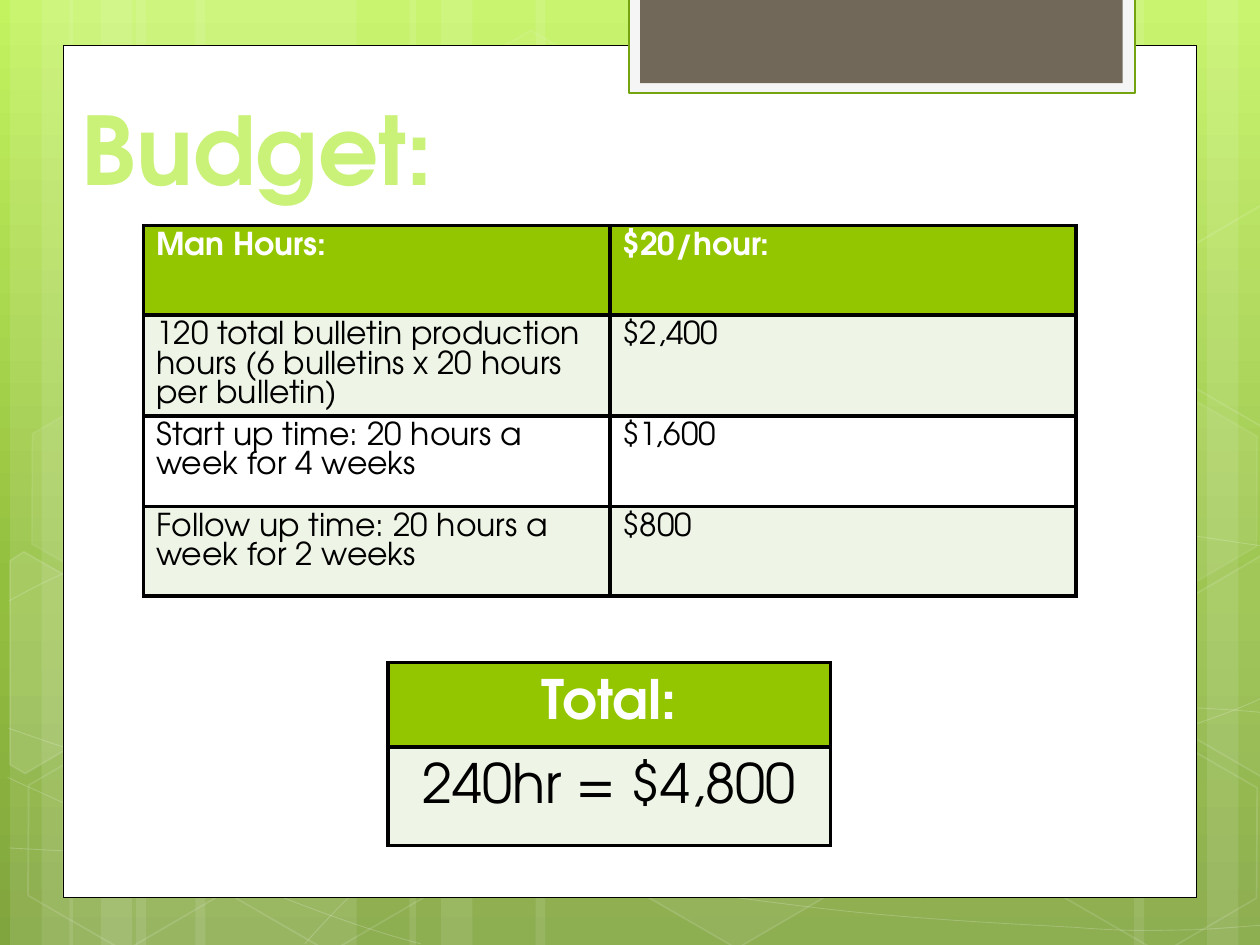
from copy import deepcopy
from lxml.etree import SubElement as Sub
from pptx import Presentation as Deck
from pptx.dml.color import RGBColor as RGB
from pptx.enum.shapes import MSO_SHAPE as Kind
from pptx.enum.text import MSO_ANCHOR as Anchor, MSO_AUTO_SIZE as Auto, PP_ALIGN as Align
from pptx.oxml.ns import qn
from pptx.util import Cm, Pt

WHITE = RGB(0xFF, 0xFF, 0xFF)
BLACK = RGB(0, 0, 0)
LIME = RGB(0xCA, 0xF2, 0x78)
GREEN = RGB(0x94, 0xC6, 0x00)
MINT = RGB(0xEE, 0xF5, 0xE7)
MOSS = RGB(0x74, 0xA5, 0x10)
PALE = RGB(0xF5, 0xF5, 0xF5)
BROWN = RGB(0x71, 0x68, 0x5A)
SKY = [(0, RGB(0xC3, 0xF3, 0x5F)), (0.62, RGB(0x93, 0xBF, 0x3F)), (1, RGB(0x81, 0xA5, 0x3E))]
FONT = "TeX Gyre Adventor"
INCH = 2.54

RAYS = [(1.08, 1.75), (0.08, 0.5), (0.33, 0.83), (1.55, 1.75), (0.55, 0.5), (0.8, 0.83),
        (7.33, 1.75), (9.58, 0.5), (9, 0.83), (4.25, 3.08), (3.25, 0.5), (3.5, 0.83)]
CURVES = [
    [(0.07, 6.73), (0.61, 6.76), (1.15, 6.79), (1.9, 6.78), (2.65, 6.77), (3.58, 6.75),
     (4.58, 6.65), (5.58, 6.55), (7, 6.36), (7.92, 6.17), (8.83, 5.98), (9.77, 5.68), (10.07, 5.51)],
    [(0.07, 4.77), (0.36, 4.61), (0.65, 4.46), (1.21, 4.31), (1.78, 4.16), (2.59, 3.94),
     (3.47, 3.87), (4.36, 3.8), (5.44, 3.79), (6.54, 3.87), (7.64, 3.95), (9.47, 4.26), (10.07, 4.34)],
    [(0.06, 6.17), (1.27, 6.72), (2.47, 7.27), (3.34, 7.49)],
    [(0.07, 5.78), (0.38, 5.89), (0.7, 6), (1.28, 6.16), (1.86, 6.31), (2.73, 6.56),
     (3.57, 6.73), (4.4, 6.9), (5.45, 7.08), (6.28, 7.18), (7.11, 7.29), (8, 7.33),
     (8.53, 7.36), (9.05, 7.4), (9.19, 7.38), (9.45, 7.38), (9.71, 7.37), (9.89, 7.35), (10.07, 7.34)],
    [(2.42, 7.49), (2.6, 7.29), (2.78, 7.09), (3.02, 6.91), (3.26, 6.73), (3.6, 6.53),
     (3.88, 6.39), (4.16, 6.25), (4.33, 6.19), (4.7, 6.09), (5.06, 5.99), (5.73, 5.85),
     (6.08, 5.78), (6.44, 5.71), (6.49, 5.71), (6.8, 5.69), (7.11, 5.66), (7.6, 5.63),
     (7.94, 5.62), (8.29, 5.61), (8.86, 5.62), (8.86, 5.62), (9.1, 5.62), (9.3, 5.62),
     (9.53, 5.62), (9.71, 5.63), (9.88, 5.64), (10.06, 5.66)],
]
CELLS = [(3.34, 0.36, 4, 8), (4.97, 5.89, 6, 12), (0.11, 5.91, 0, 12), (0.14, 3.12, 7, 8),
         (1.74, 5.92, 0, 12), (7.53, 4.53, 10, 12), (8.34, 5.93, 0, 12), (8.34, 3.14, 7, 8)]
SHARDS = [
    ([(0.08, 4.45), (0.19, 4.38), (0.96, 4.82), (0.95, 5.7), (0.2, 6.14), (0.08, 6.07)], 10),
    ([(9.26, 4.85), (10.01, 4.41), (10.09, 4.46), (10.09, 6.13), (10.02, 6.17), (9.26, 5.73)], 4),
    ([(9.26, 2.07), (10.01, 1.63), (10.1, 1.68), (10.09, 3.35), (10.02, 3.39), (9.26, 2.95)], 0),
]
HOURS = [
    ("Man Hours:", "$20/hour:"),
    ("120 total bulletin production hours (6 bulletins x 20 hours per bulletin)", "$2,400"),
    ("Start up time: 20 hours a week for 4 weeks", "$1,600"),
    ("Follow up time: 20 hours a week for 2 weeks", "$800"),
]
TOTAL = [("Total:",), ("240hr = $4,800",)]


def size(*nums):
    return [Cm(INCH * num) for num in nums]


def write(frame, text, pts=18, color=BLACK, bold=False, align=Align.LEFT):
    para = frame.paragraphs[0]
    para.alignment = align
    run = para.add_run()
    run.text = text
    font = run.font
    font.name, font.size, font.bold = FONT, Pt(pts), bold
    font.color.rgb = color


def paint(fill, color, alpha):
    if not alpha:
        fill.background()
        return
    fill.solid()
    fill.fore_color.rgb = color
    if alpha < 100:
        node = fill._xPr.find(qn("a:solidFill"))[0]
        Sub(node, qn("a:alpha"), val=str(alpha * 1000))


def bend(shape):
    route = next(shape._element.iter(qn("a:path")))
    steps = route.findall(qn("a:lnTo"))
    for i in range(0, len(steps), 3):
        curve = Sub(route, qn("a:cubicBezTo"))
        for step in steps[i:i + 3]:
            curve.append(step[0])
            route.remove(step)


class Page:
    def __init__(self):
        self.deck = Deck()
        self.deck.slide_width, self.deck.slide_height = size(10, 7.5)
        self.slide = self.deck.slides.add_slide(self.deck.slide_layouts[5])
        self.shapes = self.slide.shapes

    def sky(self, stops):
        fill = self.slide.background.fill
        fill.gradient()
        fill.gradient_angle = 270
        group = next(self.slide._element.iter(qn("a:gsLst")))
        group.append(deepcopy(group[-1]))
        for stop, (spot, color) in zip(fill.gradient_stops, stops):
            stop.position = spot
            stop.color.rgb = color

    def style(self, shape, fill=WHITE, alpha=100, line=WHITE, width=1, sheer=0):
        shape.shadow.inherit = False
        paint(shape.fill, fill, alpha)
        paint(shape.line.fill, line, sheer)
        if sheer:
            shape.line.width = Pt(width)

    def box(self, *spot, kind=Kind.RECTANGLE, **look):
        shape = self.shapes.add_shape(kind, *size(*spot))
        self.style(shape, **look)
        return shape

    def hexa(self, x, y, alpha, sheer):
        shape = self.box(x, y, 1.75, 1.52, kind=Kind.HEXAGON, alpha=alpha, sheer=sheer)
        shape.adjustments[0] = 0.285
        shape.rotation = 30

    def free(self, pts, close=False, **look):
        first, *rest = [size(*pt) for pt in pts]
        form = self.shapes.build_freeform(*first)
        form.add_line_segments(rest, close=close)
        shape = form.convert_to_shape()
        self.style(shape, **look)
        return shape

    def title(self, text, *spot):
        shape = self.shapes.title
        shape.left, shape.top, shape.width, shape.height = size(*spot)
        self.shapes._spTree.append(shape._element)
        frame = shape.text_frame
        frame.auto_size = Auto.NONE
        frame.vertical_anchor = Anchor.BOTTOM
        write(frame, text, pts=54, color=LIME, bold=True)

    def edge(self, cell):
        props = cell._tc.get_or_add_tcPr()
        for i, side in enumerate(("lnL", "lnR", "lnT", "lnB")):
            line = Sub(props, qn("a:" + side), w=str(Pt(2.25)))
            Sub(Sub(line, qn("a:solidFill")), qn("a:srgbClr"), val=str(BLACK))
            props.insert(i, line)

    def table(self, rows, x, y, wide, highs, inset=(0.1, 0.05), **look):
        cols = len(rows[0])
        grid = self.shapes.add_table(len(rows), cols, *size(x, y, wide * cols, sum(highs))).table
        grid.first_row = grid.horz_banding = False
        for col in grid.columns:
            col.width = Cm(INCH * wide)
        for r, (row, high) in enumerate(zip(rows, highs)):
            grid.rows[r].height = Cm(INCH * high)
            for c, text in enumerate(row):
                cell = grid.cell(r, c)
                cell.margin_left = cell.margin_right = Cm(INCH * inset[0])
                cell.margin_top = cell.margin_bottom = Cm(INCH * inset[1])
                paint(cell.fill, GREEN if r == 0 else MINT if r % 2 else WHITE, 100)
                self.edge(cell)
                write(cell.text_frame, text, color=BLACK if r else WHITE, bold=r == 0, **look)


def main():
    page = Page()
    page.sky(SKY)
    for x, wide in RAYS:
        page.box(x, 0, wide, 7.5, alpha=10)
    for pts in CURVES:
        bend(page.free(pts, alpha=0, width=0.5, sheer=20))
    for cell in CELLS:
        page.hexa(*cell)
    for pts, alpha in SHARDS:
        page.free(pts, close=True, alpha=alpha, sheer=12)
    page.box(0.5, 0.36, 9, 6.76, line=BLACK, width=0.5, sheer=100)
    page.box(4.99, -0.02, 4.02, 0.76, fill=PALE, line=MOSS, width=1.25, sheer=100)
    page.box(5.08, -0.02, 3.83, 0.68, fill=BROWN)
    page.title("Budget:", 0.55, 0.42, 7.68, 1.25)
    page.table(HOURS, 1.14, 1.79, 3.7, (0.71, 0.8, 0.72, 0.71))
    page.table(TOTAL, 3.08, 5.26, 3.51, (0.67, 0.78), inset=(0.27, 0.13),
               pts=31, align=Align.CENTER)
    page.deck.save("out.pptx")


if __name__ == "__main__":
    main()
